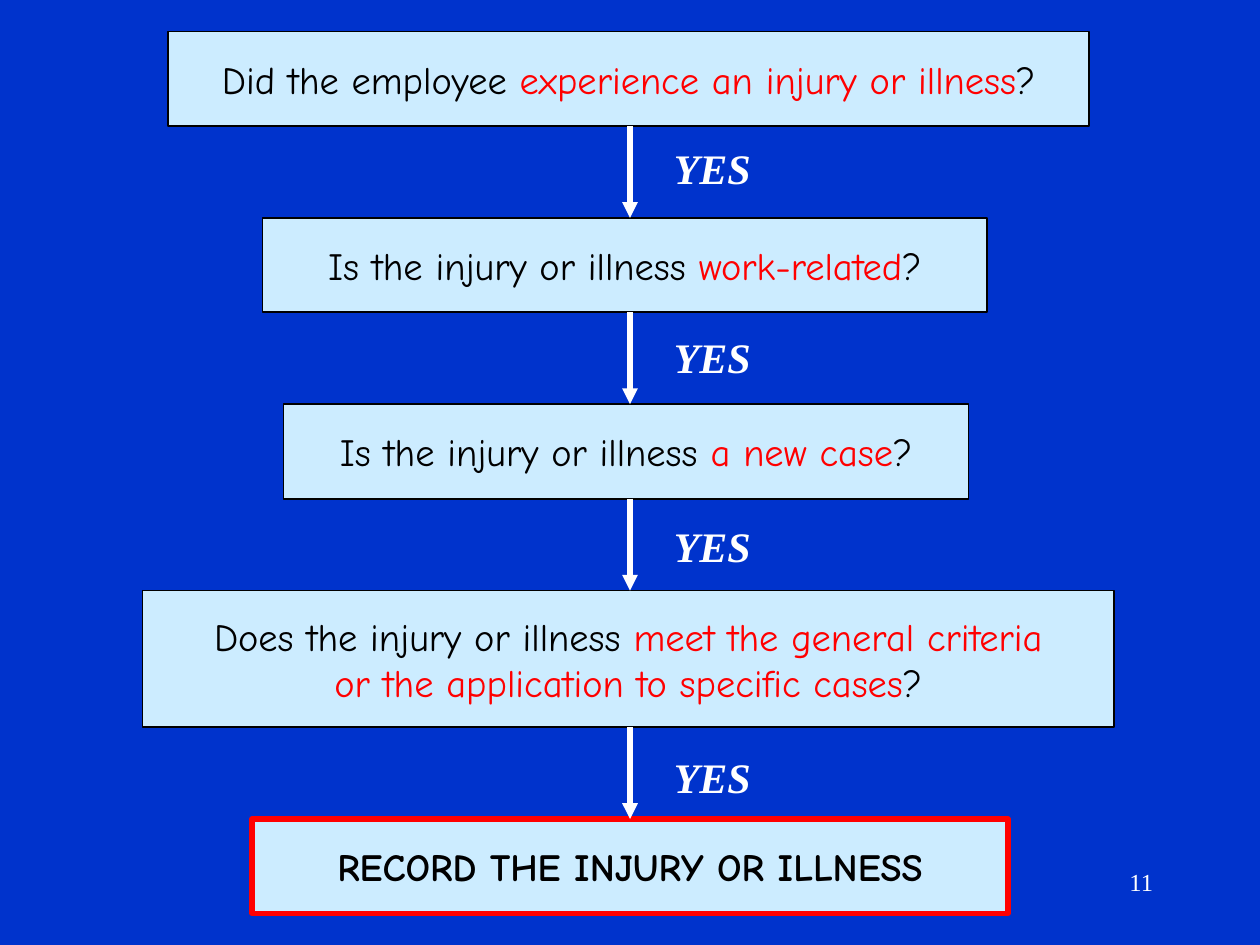
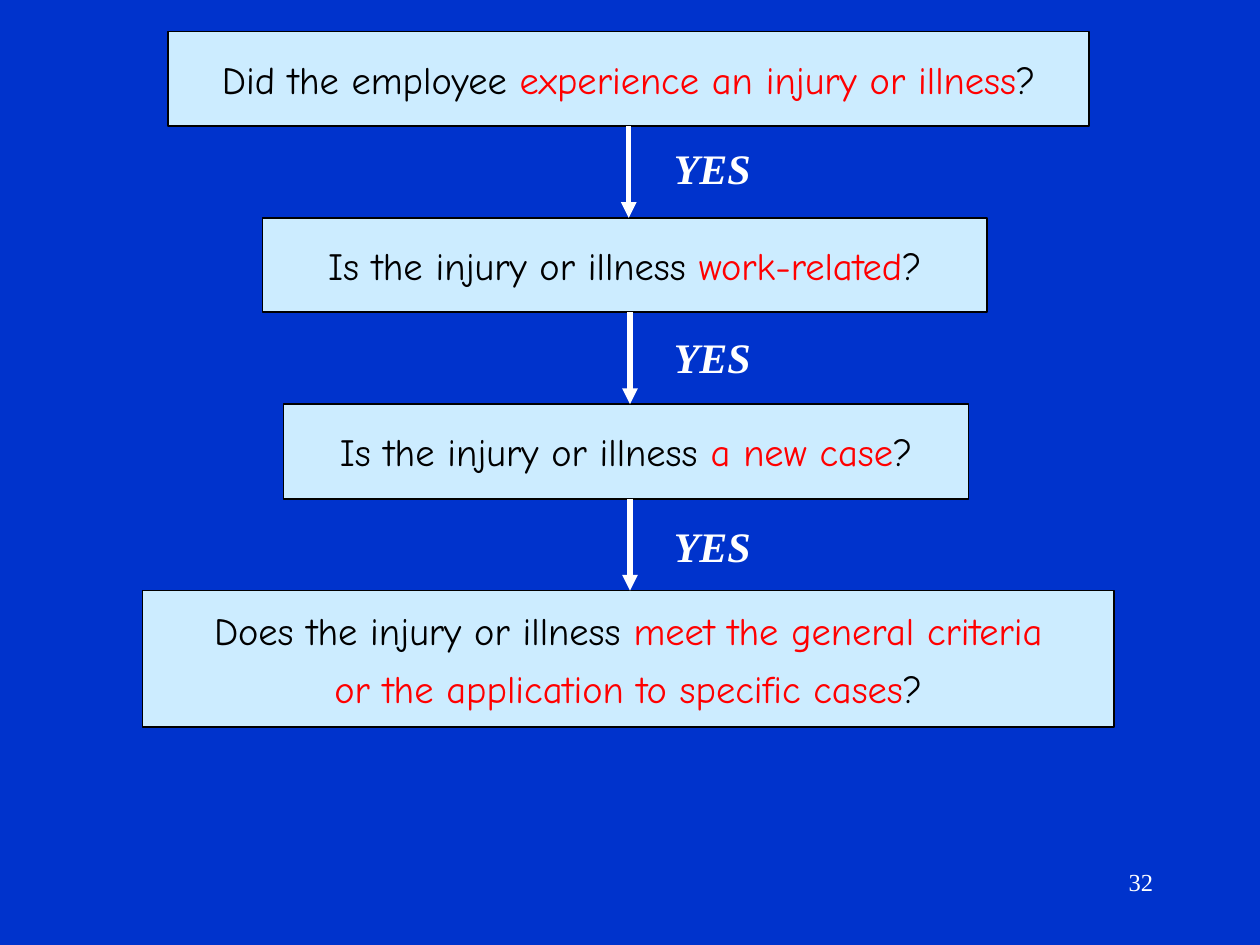
from lxml import etree
from pptx import Presentation
from pptx.dml.color import RGBColor
from pptx.enum.shapes import MSO_CONNECTOR, MSO_SHAPE
from pptx.enum.text import MSO_ANCHOR, MSO_AUTO_SIZE, PP_ALIGN
from pptx.oxml.ns import qn
from pptx.util import Pt

RECTANGLE, STRAIGHT = MSO_SHAPE.RECTANGLE, MSO_CONNECTOR.STRAIGHT
CENTER, LEFT, RIGHT = PP_ALIGN.CENTER, PP_ALIGN.LEFT, PP_ALIGN.RIGHT

COLORS = {
    "background": "0033CC",
    "box": "CCECFF",
    "text": "000000",
    "key": "FF0000",
    "white": "FFFFFF",
}
BOX_FONT, LABEL_FONT = "Comic Neue", "Times New Roman"

# Each step: left, width, height, then paragraphs of (text, colour) runs
QUESTIONS = [
    (96, 526.5, 54, [[("Did the employee ", "text"),
                      ("experience an injury or illness", "key"), ("?", "text")]]),
    (150, 414, 54, [[("Is the injury or illness ", "text"),
                     ("work-related", "key"), ("?", "text")]]),
    (162, 391.5, 54, [[("Is the injury or illness ", "text"),
                       ("a new case", "key"), ("?", "text")]]),
    (81.5, 555, 78, [[("Does the injury or illness ", "text"),
                      ("meet the general criteria", "key")],
                     [("or the application to specific cases", "key"), ("?", "text")]]),
]
RESULT = (144, 432, 54, [[("RECORD THE INJURY OR ILLNESS", "text")]])

SLIDES = [
    {"number": "11", "steps": QUESTIONS + [RESULT], "first_arrow_x": 360, "space": 0},
    {"number": "32", "steps": QUESTIONS, "first_arrow_x": 359.3, "space": 6.6},
]
LABEL = "YES"
LABEL_LEFT, LABEL_TOPS = 378, [78, 186, 294, 426]
FLOW_TOP, GAP, ARROW_X = 18, 52.5, 360


def color(name):
    return RGBColor.from_string(COLORS[name])


def write(text_frame, paragraphs, font, size, align, space=0, bold=False, italic=False):
    """Fill a frame with paragraphs of (text, colour name) runs."""
    for index, runs in enumerate(paragraphs):
        paragraph = text_frame.add_paragraph() if index else text_frame.paragraphs[0]
        paragraph.alignment = align
        if index:
            paragraph.space_before = Pt(space)
        for text, color_name in runs:
            run = paragraph.add_run()
            run.text = text
            run.font.name, run.font.size = font, Pt(size)
            run.font.bold, run.font.italic = bold, italic
            run.font.color.rgb = color(color_name)


def add_box(slide, top, step, space):
    left, width, height, paragraphs = step
    is_result = step is RESULT
    box = slide.shapes.add_shape(RECTANGLE, Pt(left), Pt(top), Pt(width), Pt(height))
    box.shadow.inherit = False
    box.fill.solid()
    box.fill.fore_color.rgb = color("box")
    box.line.color.rgb = color("key" if is_result else "text")
    box.line.width = Pt(3 if is_result else 1)
    box.text_frame.word_wrap = False
    box.text_frame.vertical_anchor = MSO_ANCHOR.MIDDLE
    write(box.text_frame, paragraphs, BOX_FONT, 22, CENTER, space, bold=is_result)


def add_label(slide, top):
    label = slide.shapes.add_textbox(Pt(LABEL_LEFT), Pt(top), Pt(58.5), Pt(36))
    label.text_frame.word_wrap = False
    label.text_frame.auto_size = MSO_AUTO_SIZE.SHAPE_TO_FIT_TEXT
    write(label.text_frame, [[(LABEL, "white")]], LABEL_FONT, 24, LEFT,
          bold=True, italic=True)


def add_arrow(slide, x, top):
    arrow = slide.shapes.add_connector(STRAIGHT, Pt(x), Pt(top), Pt(x), Pt(top + GAP))
    arrow.line.color.rgb = color("white")
    arrow.line.width = Pt(3)
    etree.SubElement(arrow.line._get_or_add_ln(), qn("a:tailEnd"), type="triangle")
    etree.SubElement(arrow._element.spPr, qn("a:effectLst"))


def add_number(slide, number):
    box = slide.shapes.add_textbox(Pt(516), Pt(492), Pt(150), Pt(36))
    box.text_frame.word_wrap = True
    write(box.text_frame, [[(number, "white")]], LABEL_FONT, 14, RIGHT)


def build_slide(presentation, content):
    slide = presentation.slides.add_slide(presentation.slide_layouts[6])
    slide.background.fill.solid()
    slide.background.fill.fore_color.rgb = color("background")
    add_number(slide, content["number"])

    top, arrow_tops = FLOW_TOP, []
    for step in content["steps"]:
        add_box(slide, top, step, content["space"])
        arrow_tops.append(top + step[2])
        top = arrow_tops[-1] + GAP

    links = zip(arrow_tops[:-1], LABEL_TOPS)
    for index, (arrow_top, label_top) in enumerate(links):
        add_label(slide, label_top)
        add_arrow(slide, ARROW_X if index else content["first_arrow_x"], arrow_top)


def main():
    presentation = Presentation()
    presentation.slide_width, presentation.slide_height = Pt(720), Pt(540)
    for content in SLIDES:
        build_slide(presentation, content)
    presentation.save("out.pptx")


if __name__ == "__main__":
    main()
